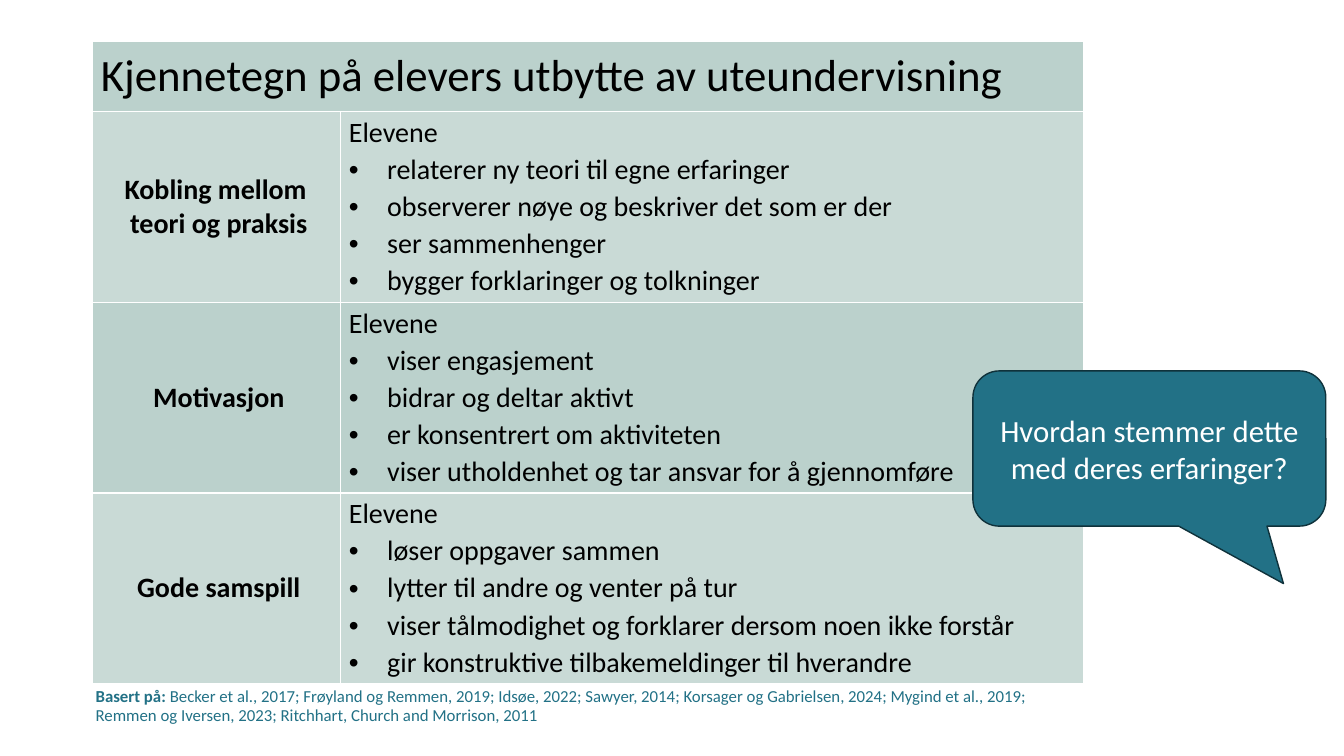
from dataclasses import dataclass

from lxml import etree
from pptx import Presentation
from pptx.dml.color import RGBColor
from pptx.enum.shapes import MSO_SHAPE
from pptx.enum.text import MSO_ANCHOR, PP_ALIGN
from pptx.oxml.ns import qn
from pptx.util import Inches, Pt

LEFT, CENTER = PP_ALIGN.LEFT, PP_ALIGN.CENTER
TOP, MIDDLE = MSO_ANCHOR.TOP, MSO_ANCHOR.MIDDLE
CALLOUT = MSO_SHAPE.ROUNDED_RECTANGULAR_CALLOUT

FONT = "Calibri"
BLACK, WHITE, TEAL, NAVY = "000000", "FFFFFF", "227186", "0F323B"
SAGE, PALE = "BBD1CC", "C9DAD6"
WIDTHS = 2.46, 7.37
HEAD, BODY = 0.7, 1.89


@dataclass
class Theme:
    name: str
    signs: list[str]
    fill: str


THEMES = [
    Theme("Kobling mellom \nteori og praksis", [
        "relaterer ny teori til egne erfaringer",
        "observerer nøye og beskriver det som er der",
        "ser sammenhenger",
        "bygger forklaringer og tolkninger",
    ], PALE),
    Theme("Motivasjon", [
        "viser engasjement",
        "bidrar og deltar aktivt",
        "er konsentrert om aktiviteten",
        "viser utholdenhet og tar ansvar for å gjennomføre",
    ], SAGE),
    Theme("Gode samspill", [
        "løser oppgaver sammen",
        "lytter til andre og venter på tur",
        "viser tålmodighet og forklarer dersom noen ikke forstår",
        "gir konstruktive tilbakemeldinger til hverandre",
    ], PALE),
]
SOURCES = (
    "Becker et al., 2017; Frøyland og Remmen, 2019; Idsøe, 2022; Sawyer, 2014; "
    "Korsager og Gabrielsen, 2024; Mygind et al., 2019; Remmen og Iversen, 2023; "
    "Ritchhart, Church and Morrison, 2011"
)


def color(code: str) -> RGBColor:
    return RGBColor.from_string(code)


def write(para, text: str, *, size: float = 20, ink: str = BLACK,
          bold: bool = False, align=LEFT, before: float = 0,
          after: float = 0) -> None:
    para.alignment = align
    para.space_before, para.space_after = Pt(before), Pt(after)
    for i, line in enumerate(text.split("\n")):
        if i:
            para.add_line_break()
        run = para.add_run()
        run.text = line
        font = run.font
        font.name, font.size, font.bold = FONT, Pt(size), bold
        font.color.rgb = color(ink)


def bullet(para) -> None:
    props = para._p.get_or_add_pPr()
    props.set("marL", str(Inches(0.38)))
    props.set("indent", str(-Inches(0.38)))
    etree.SubElement(props, qn("a:buFont"), typeface="Arial")
    etree.SubElement(props, qn("a:buChar"), char="•")


def style(cell, fill: str, anchor) -> None:
    cell.margin_left = Inches(0.08)
    cell.margin_right = cell.margin_top = cell.margin_bottom = Inches(0.04)
    cell.vertical_anchor = anchor
    props = cell._tc.get_or_add_tcPr()
    for side in ("lnL", "lnR", "lnT", "lnB"):
        edge = etree.SubElement(props, qn(f"a:{side}"), w=str(Pt(1)))
        paint = etree.SubElement(edge, qn("a:solidFill"))
        etree.SubElement(paint, qn("a:srgbClr"), val=WHITE)
    cell.fill.solid()
    cell.fill.fore_color.rgb = color(fill)


def add_row(table, row: int, theme: Theme) -> None:
    name, body = table.cell(row, 0), table.cell(row, 1)
    style(name, theme.fill, MIDDLE)
    write(name.text_frame.paragraphs[0], theme.name, bold=True, align=CENTER,
          before=1, after=1)
    style(body, theme.fill, TOP)
    frame = body.text_frame
    write(frame.paragraphs[0], "Elevene", before=1, after=1)
    for sign in theme.signs:
        para = frame.add_paragraph()
        write(para, sign, before=1, after=1)
        bullet(para)


def add_grid(slide) -> None:
    rows = len(THEMES) + 1
    table = slide.shapes.add_table(
        rows, 2, Inches(0.92), Inches(0.41), Inches(sum(WIDTHS)),
        Inches(HEAD + BODY * len(THEMES))).table
    table.first_row = table.horz_banding = False
    for col, width in zip(table.columns, WIDTHS):
        col.width = Inches(width)
    for i, row in enumerate(table.rows):
        row.height = Inches(BODY if i else HEAD)
    title = table.cell(0, 0)
    title.merge(table.cell(0, 1))
    style(title, SAGE, MIDDLE)
    write(title.text_frame.paragraphs[0],
          "Kjennetegn på elevers utbytte av uteundervisning",
          size=32, before=1, after=1)
    for i, theme in enumerate(THEMES, 1):
        add_row(table, i, theme)


def add_bubble(slide) -> None:
    bubble = slide.shapes.add_shape(
        CALLOUT, Inches(9.65), Inches(3.68), Inches(3.5), Inches(1.54))
    bubble.shadow.inherit = False
    for i, value in enumerate((0.38, 0.87, 0.17)):
        bubble.adjustments[i] = value
    bubble.fill.solid()
    bubble.fill.fore_color.rgb = color(TEAL)
    bubble.line.color.rgb = color(NAVY)
    bubble.line.width = Pt(1)
    frame = bubble.text_frame
    frame.word_wrap, frame.vertical_anchor = True, MIDDLE
    write(frame.paragraphs[0], "Hvordan stemmer dette med deres erfaringer?",
          size=22, ink=WHITE, align=CENTER)


def add_note(slide) -> None:
    frame = slide.shapes.add_textbox(
        Inches(0.85), Inches(6.78), Inches(9.61), Inches(0.58)).text_frame
    frame.word_wrap = True
    para = frame.paragraphs[0]
    para.line_spacing = 0.9
    write(para, "Basert på: ", size=12, ink=TEAL, bold=True, before=10)
    write(para, SOURCES, size=12, ink=TEAL, before=10)


def main() -> None:
    deck = Presentation()
    deck.slide_width, deck.slide_height = Inches(13.33), Inches(7.5)
    slide = deck.slides.add_slide(deck.slide_layouts[6])
    add_grid(slide)
    add_bubble(slide)
    add_note(slide)
    deck.save("out.pptx")


if __name__ == "__main__":
    main()
